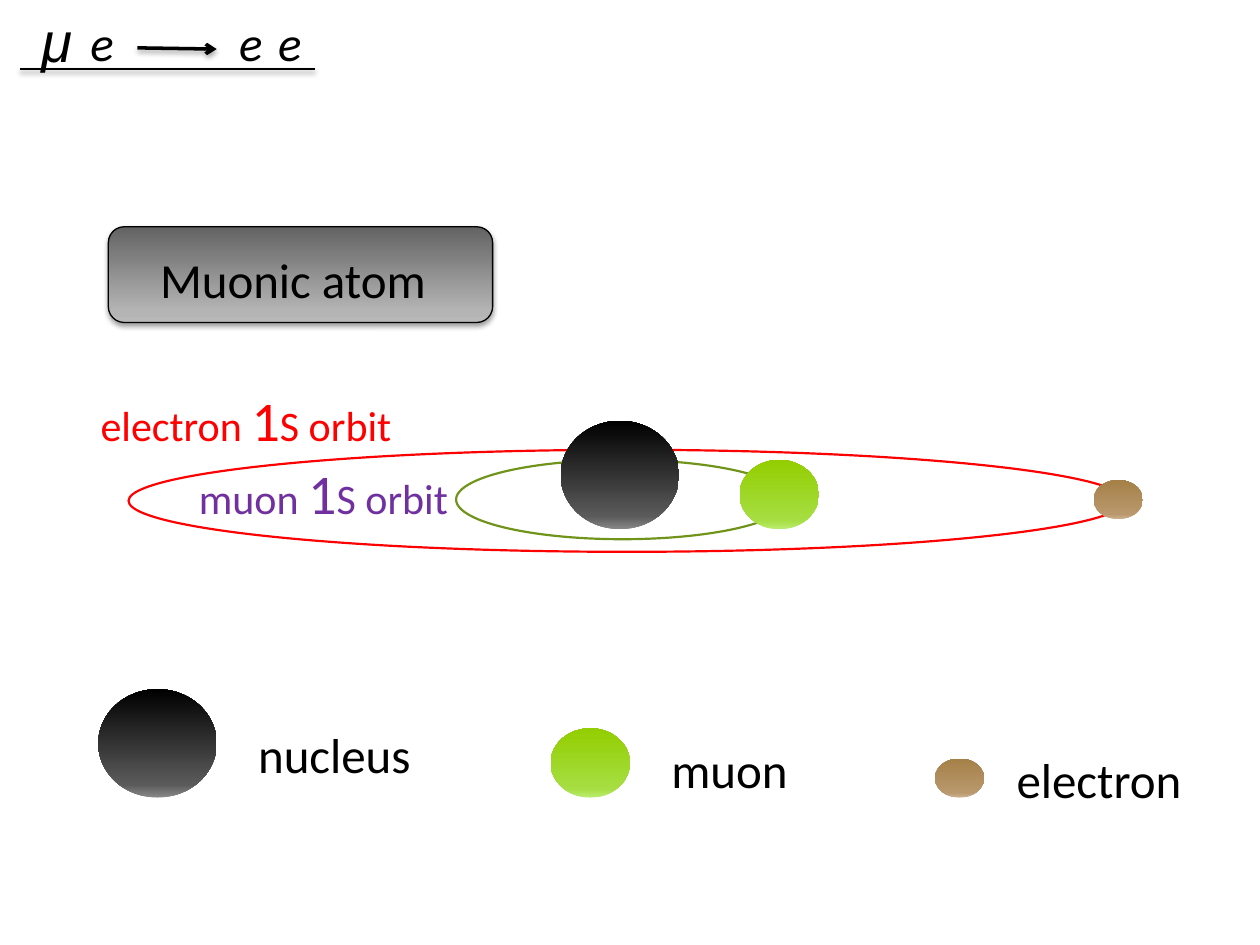
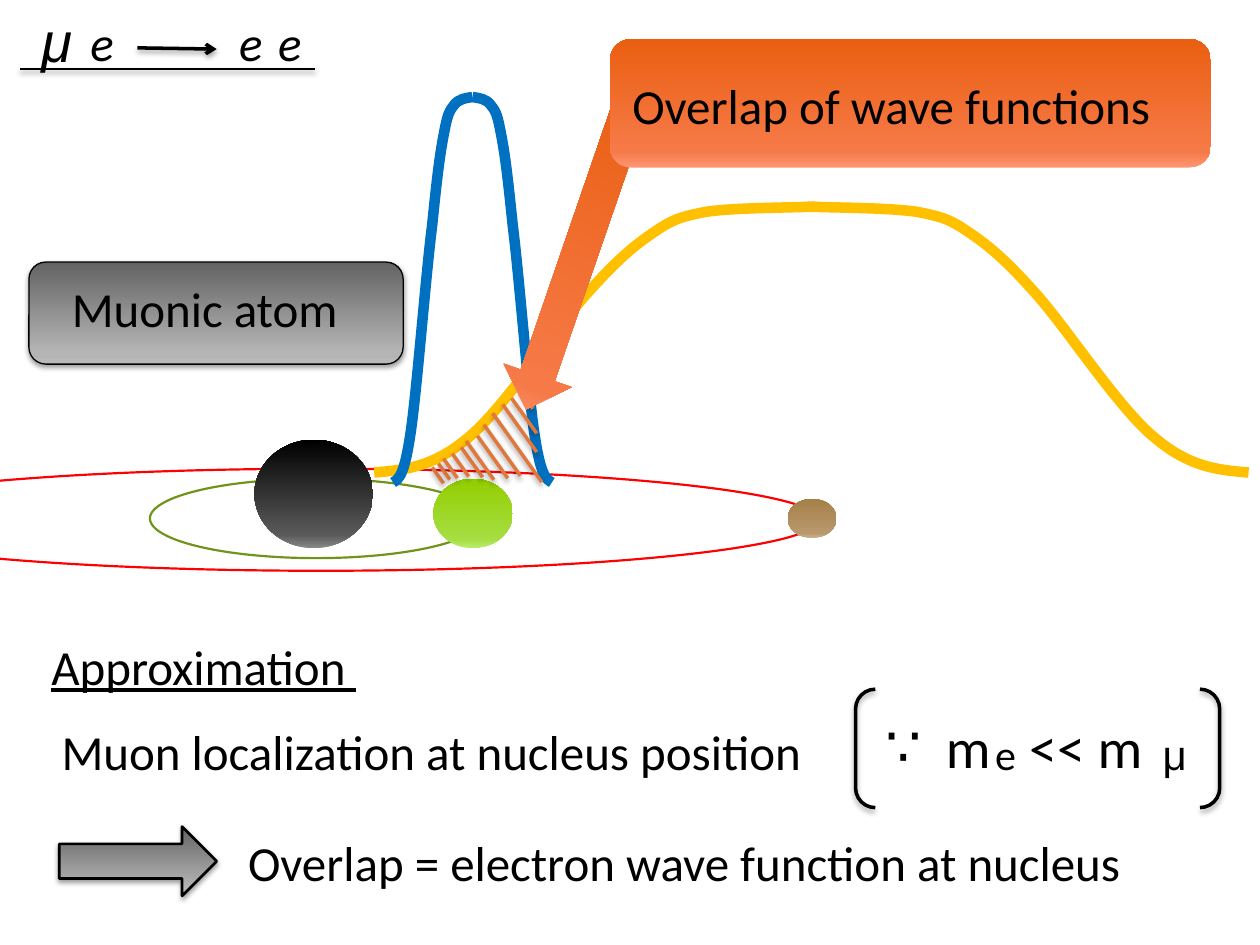
from typing import NamedTuple

from pptx import Presentation
from pptx.dml.color import RGBColor
from pptx.enum.shapes import MSO_CONNECTOR, MSO_SHAPE
from pptx.enum.text import MSO_ANCHOR, MSO_AUTO_SIZE, PP_ALIGN
from pptx.oxml import parse_xml
from pptx.oxml.ns import nsdecls, qn
from pptx.util import Inches, Pt

BLACK = RGBColor(0x00, 0x00, 0x00)
RED = RGBColor(0xFF, 0x00, 0x00)
PURPLE = RGBColor(0x70, 0x30, 0xA0)
OLIVE = RGBColor(0x70, 0x93, 0x1A)
GOLD = RGBColor(0xFF, 0xC0, 0x00)
BLUE = RGBColor(0x00, 0x70, 0xC0)
RUST = RGBColor(0xE0, 0x77, 0x3C)

NUCLEUS_FILL = ("888888", "5A5A5A", "000000")
MUON_FILL = ("BAED6F", "A6DE43", "93CE00")
ELECTRON_FILL = ("CCB08E", "B9986D", "A58048")
GREY_FILL = ("B8B8B8", "B4B4B4", "636363")
ORANGE_FILL = ("FF9673", "F67A48", "EA5F11")
STOPS = (0, 12, 100)

NUCLEUS = (0.94, 0.86, NUCLEUS_FILL)
MUON = (0.63, 0.55, MUON_FILL)
ELECTRON = (0.39, 0.31, ELECTRON_FILL)

BODY = {"name": "Calibri", "size": Pt(28)}
SMALL = BODY | {"size": Pt(24)}
LARGE = BODY | {"size": Pt(32)}
ITALIC = BODY | {"italic": True}
GREEK = {"name": "Arial", "size": Pt(24)}

SOFT_SHADOW = (38, 3.1, 1.6)
DARK_SHADOW = (35, 3.1, 1.8)

ELECTRON_WAVE = [
    (2.97, 3.75), (3.21, 3.73), (3.44, 3.71), (3.72, 3.47), (4, 3.24),
    (4.41, 2.61), (4.65, 2.34), (4.89, 2.07), (5.02, 1.96), (5.18, 1.85),
    (5.34, 1.74), (5.4, 1.72), (5.61, 1.68), (5.83, 1.65), (6.15, 1.65),
    (6.47, 1.64),
]
MUON_WAVE = [
    (3.12, 3.83), (3.17, 3.8), (3.21, 3.77), (3.26, 3.43), (3.31, 3.09),
    (3.38, 2.18), (3.43, 1.79), (3.47, 1.4), (3.49, 1.24), (3.52, 1.08),
    (3.55, 0.92), (3.56, 0.89), (3.6, 0.84), (3.64, 0.78), (3.7, 0.78),
    (3.75, 0.77),
]
HATCH_SLOPE = 1.4
HATCH = [
    (3.43, 3.71, 0.09), (3.48, 3.68, 0.09), (3.52, 3.64, 0.11),
    (3.59, 3.6, 0.13), (3.66, 3.55, 0.17), (3.7, 3.5, 0.22),
    (3.79, 3.46, 0.24), (3.84, 3.37, 0.29), (3.91, 3.28, 0.39),
    (3.99, 3.21, 0.27), (4.06, 3.16, 0.2), (4.12, 3.09, 0.11),
]


class Box(NamedTuple):
    """A rectangle in inches."""

    left: float
    top: float
    width: float
    height: float

    def inner(self, left, top, width, height):
        """Return a box placed relative to this one."""
        return Box(self.left + left, self.top + top, width, height)

    def lengths(self):
        """Return the four measures as lengths."""
        return [Inches(value) for value in self]


def add_effects(shape, shadow=None):
    """Give a shape an effect list, empty or with a downward shadow."""
    effects = parse_xml(f"<a:effectLst {nsdecls('a')}/>")
    if shadow:
        alpha, blur, distance = shadow
        effects.append(parse_xml(
            f'<a:outerShdw {nsdecls("a")} blurRad="{Pt(blur)}" dist="{Pt(distance)}" '
            f'dir="5400000" rotWithShape="0"><a:srgbClr val="000000">'
            f'<a:alpha val="{alpha * 1000}"/></a:srgbClr></a:outerShdw>'))
    shape.element.spPr.append(effects)


def set_line(shape, color, width):
    """Draw the outline of a shape, or none without a colour."""
    if color is None:
        shape.line.fill.background()
    else:
        shape.line.color.rgb = color
        shape.line.width = Pt(width)


def add_figure(page, kind, box, colors=None, line=None, width=1.25, shadow=None):
    """Add a preset shape with an upward gradient or no fill."""
    shape = page.shapes.add_shape(kind, *box.lengths())
    set_line(shape, line, width)
    if colors:
        stops = "".join(
            f'<a:gs pos="{stop * 1000}"><a:srgbClr val="{color}"/></a:gs>'
            for stop, color in zip(STOPS, colors))
        shape.element.spPr.find(qn("a:prstGeom")).addnext(parse_xml(
            f'<a:gradFill {nsdecls("a")} rotWithShape="1"><a:gsLst>{stops}</a:gsLst>'
            f'<a:lin ang="16200000" scaled="0"/></a:gradFill>'))
    else:
        shape.fill.background()
    add_effects(shape, shadow)
    return shape


def add_line(page, start, end, color, width, shadow, arrow=False):
    """Add a straight line with a shadow and an optional arrowhead."""
    ends = [Inches(value) for value in (*start, *end)]
    line = page.shapes.add_connector(MSO_CONNECTOR.STRAIGHT, *ends)
    set_line(line, color, width)
    if arrow:
        line.element.spPr.find(qn("a:ln")).append(
            parse_xml(f'<a:tailEnd {nsdecls("a")} type="arrow"/>'))
    add_effects(line, shadow)


def write(frame, pieces, color=BLACK, tab=None):
    """Write formatted pieces as one paragraph of a frame."""
    frame.word_wrap = True
    frame.auto_size = MSO_AUTO_SIZE.SHAPE_TO_FIT_TEXT
    frame.vertical_anchor = MSO_ANCHOR.TOP
    para = frame.paragraphs[0]
    para.alignment = PP_ALIGN.LEFT
    if tab:
        para._p.get_or_add_pPr().append(parse_xml(
            f'<a:tabLst {nsdecls("a")}><a:tab pos="{Inches(tab)}" algn="l"/></a:tabLst>'))
    for text, style in pieces:
        span = para.add_run()
        span.text = text
        for name, value in style.items():
            setattr(span.font, name, value)
        span.font.color.rgb = color


def add_text(page, box, text, style=BODY, **options):
    """Add a text box with one style, or with a list of styled pieces."""
    label = page.shapes.add_textbox(*box.lengths())
    pieces = [(text, style)] if isinstance(text, str) else text
    write(label.text_frame, pieces, **options)
    return label


def add_reaction(page, box):
    """Add the underlined reaction formula at the top left."""
    add_text(page, box.inner(0.07, 0, 0.7, 0.64), "μ",
             GREEK | {"size": Pt(32), "italic": True})
    for left in (0.46, 1.64, 1.95):
        add_text(page, box.inner(left, 0.05, 0.86, 0.57), "e", ITALIC)
    add_line(page, (box.left + 0.93, box.top + 0.38), (box.left + 1.56, box.top + 0.39),
             BLACK, 2, DARK_SHADOW, arrow=True)
    bottom = box.top + box.height
    add_line(page, (box.left, bottom), (box.left + box.width, bottom),
             BLACK, 1.25, SOFT_SHADOW)


def add_title(page, plate, text_box):
    """Put the slide title on a grey plate."""
    badge = add_figure(page, MSO_SHAPE.ROUNDED_RECTANGLE, plate, GREY_FILL,
                       BLACK, 0.75, SOFT_SHADOW)
    title = page.shapes.title
    badge.element.addnext(title.element)
    title.left, title.top, title.width, title.height = text_box.lengths()
    write(title.text_frame, [("Muonic atom", BODY)])


def add_particle(page, box, left, top, particle):
    """Add a particle at an offset inside a box."""
    width, height, colors = particle
    add_figure(page, MSO_SHAPE.OVAL, box.inner(left, top, width, height), colors)


def add_atom(page, box):
    """Add both orbits with the nucleus, muon and electron."""
    add_figure(page, MSO_SHAPE.OVAL, box.inner(2.6, 0.08, 2.64, 0.63), line=OLIVE)
    add_particle(page, box, 4.85, 0.08, MUON)
    add_figure(page, MSO_SHAPE.OVAL, box, line=RED)
    add_particle(page, box, 3.43, -0.23, NUCLEUS)
    add_particle(page, box, 7.66, 0.24, ELECTRON)


def add_legend(page, box):
    """Name the three particles in a row aligned at the bottom."""
    entries = [("nucleus", NUCLEUS, 0, 1.17, 0.23),
               ("muon", MUON, 3.59, 4.45, 0.35),
               ("electron", ELECTRON, 6.64, 7.19, 0.43)]
    for name, particle, left, label_left, label_top in entries:
        add_particle(page, box, left, box.height - particle[1], particle)
        add_text(page, box.inner(label_left, label_top, 1.72, 0.57), name)


def add_orbit_label(page, box, particle, color):
    """Label the 1S orbit of a particle."""
    pieces = [(f"{particle} ", SMALL), ("1", LARGE), ("S orbit", SMALL)]
    add_text(page, box, pieces, color=color)


def add_curve(page, points, color):
    """Add an open curve through cubic control points."""
    start, *rest = [(Inches(x), Inches(y)) for x, y in points]
    builder = page.shapes.build_freeform(*start)
    builder.add_line_segments(rest, close=False)
    curve = builder.convert_to_shape()
    outline = curve.element.spPr.find(f".//{qn('a:path')}")
    segments = outline.findall(qn("a:lnTo"))
    for first in range(0, len(segments), 3):
        bend = parse_xml(f"<a:cubicBezTo {nsdecls('a')}/>")
        for segment in segments[first:first + 3]:
            bend.append(segment[0])
            outline.remove(segment)
        outline.append(bend)
    curve.fill.background()
    set_line(curve, color, 6)
    add_effects(curve)


def add_wave(page, half, axis, color):
    """Add a wave function as a half curve and its mirror image."""
    add_curve(page, half, color)
    add_curve(page, [(2 * axis - x, y) for x, y in half], color)


def add_overlap(page, box):
    """Add both waves, their hatched overlap and the callout."""
    add_wave(page, ELECTRON_WAVE, 6.44, GOLD)
    add_wave(page, MUON_WAVE, 3.75, BLUE)
    for x, y, run in HATCH:
        add_line(page, (x, y), (x + run, y + HATCH_SLOPE * run), RUST, 2, DARK_SHADOW)
    pointer = add_figure(page, MSO_SHAPE.DOWN_ARROW,
                         box.inner(-0.53, 0.43, 0.57, 2.58), ORANGE_FILL)
    pointer.rotation = 19
    add_figure(page, MSO_SHAPE.ROUNDED_RECTANGLE, box, ORANGE_FILL)
    add_text(page, box.inner(0.08, 0.24, 4.77, 0.57), "Overlap of wave functions")


def add_mass_relation(page, box):
    """Add the bracketed comparison of the two masses."""
    add_text(page, box.inner(0.62, 0.14, 2.27, 0.64), "m\t<< m", LARGE, tab=0.66)
    add_figure(page, MSO_SHAPE.DOUBLE_BRACKET, box, line=BLACK, width=2,
               shadow=DARK_SHADOW)
    add_text(page, box.inner(1.01, 0.26, 0.47, 0.5), "e", SMALL)
    add_text(page, box.inner(2.34, 0.26, 0.47, 0.5), "μ", GREEK)
    because = add_text(page, box.inner(-0.08, 0.16, 0.7, 0.64), "∴", LARGE)
    because.rotation = 180


def add_approximation(page, box):
    """Add the approximation and what follows from it."""
    add_text(page, box.inner(0, 0, 3.36, 0.57), "Approximation ",
             BODY | {"underline": True})
    add_text(page, box.inner(0.08, 0.68, 6.72, 0.57),
             "Muon localization at nucleus position")
    add_mass_relation(page, box.inner(6.48, 0.47, 2.89, 0.94))
    add_figure(page, MSO_SHAPE.RIGHT_ARROW, box.inner(0.16, 1.56, 1.25, 0.55),
               GREY_FILL, BLACK, 1.5, SOFT_SHADOW)
    add_text(page, box.inner(1.56, 1.56, 8.05, 0.57),
             "Overlap = electron wave function at nucleus")


def start_page(deck):
    """Start a slide with the shared reaction header."""
    page = deck.slides.add_slide(deck.slide_layouts[5])
    add_reaction(page, Box(0.16, 0, 2.34, 0.55))
    return page


def build_structure(deck):
    """Build the slide on the structure of the atom."""
    page = start_page(deck)
    add_atom(page, Box(1.02, 3.57, 7.91, 0.81))
    add_legend(page, Box(0.78, 5.47, 8.91, 0.86))
    add_title(page, Box(0.86, 1.8, 3.05, 0.76), Box(1.17, 1.93, 2.81, 0.57))
    add_orbit_label(page, Box(0.7, 3.01, 2.97, 0.64), "electron", RED)
    add_orbit_label(page, Box(1.48, 3.59, 2.42, 0.64), "muon", PURPLE)


def build_waves(deck):
    """Build the slide on the overlap of the wave functions."""
    page = start_page(deck)
    add_atom(page, Box(-1.41, 3.72, 7.91, 0.81))
    add_title(page, Box(0.23, 2.08, 2.97, 0.81), Box(0.47, 2.16, 2.81, 0.57))
    add_overlap(page, Box(4.84, 0.31, 4.77, 1.02))
    add_approximation(page, Box(0.31, 5, 9.61, 2.13))


def main():
    """Build and save the deck."""
    deck = Presentation()
    deck.slide_width, deck.slide_height = Inches(10), Inches(7.5)
    build_structure(deck)
    build_waves(deck)
    deck.save("out.pptx")


if __name__ == "__main__":
    main()
